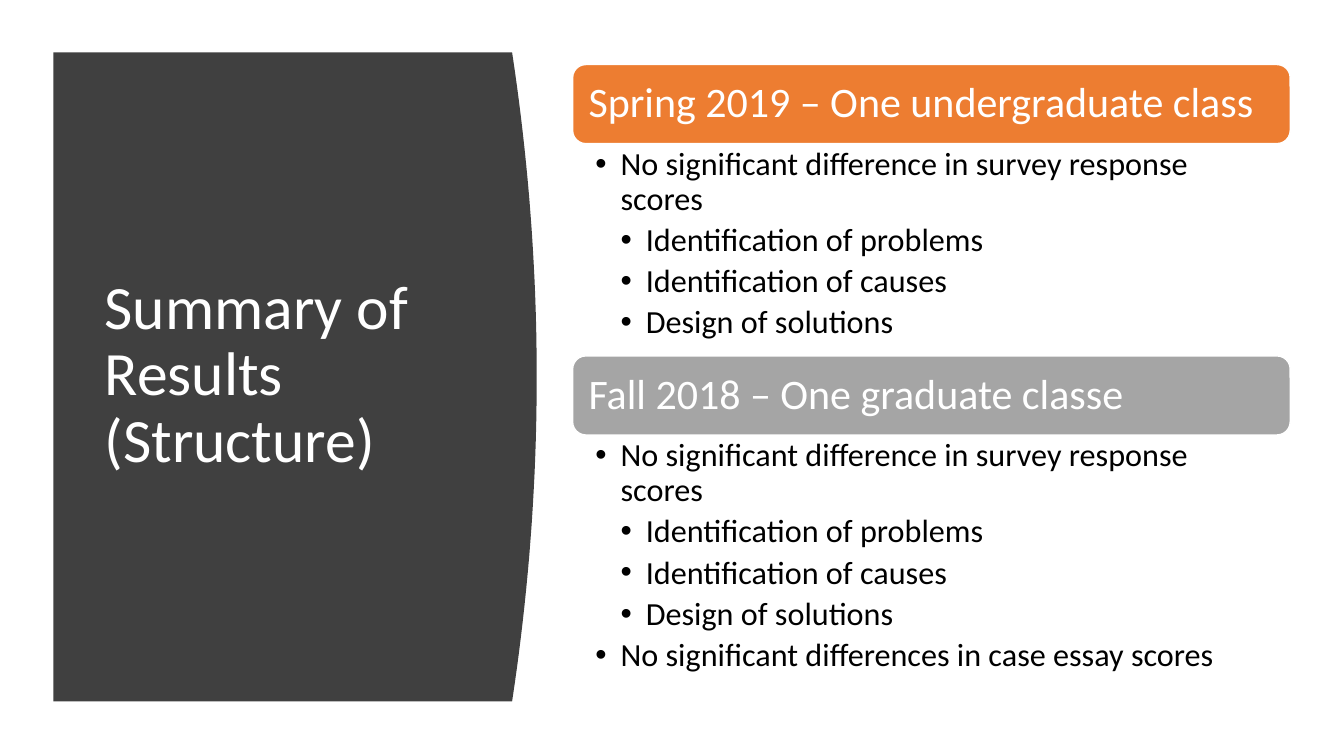
from lxml import etree
from pptx import Presentation
from pptx.dml.color import RGBColor
from pptx.enum.shapes import MSO_SHAPE
from pptx.enum.text import MSO_ANCHOR, PP_ALIGN
from pptx.oxml.ns import qn
from pptx.util import Pt

WHITE = RGBColor(0xFF, 0xFF, 0xFF)
BLACK = RGBColor(0, 0, 0)
CHARCOAL = RGBColor(0x40, 0x40, 0x40)
ORANGE = RGBColor(0xED, 0x7D, 0x31)
GRAY = RGBColor(0xA5, 0xA5, 0xA5)
FONT = "Calibri"

# Content: heading, colour, body height, (level, finding)
TITLE = "Summary of Results (Structure)"
SURVEY_FINDINGS = [
    (1, "No significant difference in survey response scores"),
    (2, "Identification of problems"),
    (2, "Identification of causes"),
    (2, "Design of solutions"),
]
SECTIONS = [
    ("Spring 2019 – One undergraduate class", ORANGE, 151.6, SURVEY_FINDINGS),
    ("Fall 2018 – One graduate classe", GRAY, 180.7,
     SURVEY_FINDINGS + [(1, "No significant differences in case essay scores")]),
]

# Layout in points
PANEL_LEFT, PANEL_TOP, PANEL_RIGHT, PANEL_BOTTOM = 38.2, 37.4, 365.8, 501.1
PANEL_BULGE = 17.6
CURVE_STEPS = 40
SECTION_LEFT, SECTION_TOP, SECTION_WIDTH = 409, 46.1, 512.6
HEADING_HEIGHT = 56.5
BULLET_INDENT = 18


def set_insets(frame, horizontal, vertical):
    frame.word_wrap = True
    frame.margin_left = frame.margin_right = Pt(horizontal)
    frame.margin_top = frame.margin_bottom = Pt(vertical)


def write(paragraph, text, size, color, space_after=0):
    paragraph.text = text
    paragraph.alignment = PP_ALIGN.LEFT
    paragraph.line_spacing = 0.9
    paragraph.space_after = Pt(space_after)
    paragraph.font.name = FONT
    paragraph.font.size = Pt(size)
    paragraph.font.color.rgb = color


def add_bullet(paragraph, level):
    paragraph.level = level
    properties = paragraph._p.get_or_add_pPr()
    properties.set("marL", str(Pt(BULLET_INDENT * level)))
    properties.set("indent", str(-Pt(BULLET_INDENT)))
    etree.SubElement(properties, qn("a:buFont")).set("typeface", "Arial")
    etree.SubElement(properties, qn("a:buChar")).set("char", "•")


presentation = Presentation()
presentation.slide_width, presentation.slide_height = Pt(960), Pt(540)
slide = presentation.slides.add_slide(presentation.slide_layouts[6])
shapes = slide.shapes

# Title panel with a parabolic right edge
curve = []
for step in range(CURVE_STEPS + 1):
    t = 2 * step / CURVE_STEPS - 1
    y = PANEL_TOP + (PANEL_BOTTOM - PANEL_TOP) * step / CURVE_STEPS
    curve.append((Pt(PANEL_RIGHT + PANEL_BULGE * (1 - t * t)), Pt(y)))
outline = shapes.build_freeform(Pt(PANEL_LEFT), Pt(PANEL_TOP))
outline.add_line_segments(curve + [(Pt(PANEL_LEFT), Pt(PANEL_BOTTOM))], close=True)
panel = outline.convert_to_shape()
panel.shadow.inherit = False
panel.fill.solid()
panel.fill.fore_color.rgb = CHARCOAL
panel.line.fill.background()

title = shapes.add_textbox(Pt(67.7), Pt(79.9), Pt(269.3), Pt(377.3)).text_frame
set_insets(title, 7.2, 3.6)
title.vertical_anchor = MSO_ANCHOR.MIDDLE
write(title.paragraphs[0], TITLE, 44, WHITE)

# Sections stacked from the top
top = SECTION_TOP
for heading_text, color, body_height, findings in SECTIONS:
    heading = shapes.add_shape(MSO_SHAPE.ROUNDED_RECTANGLE, Pt(SECTION_LEFT), Pt(top),
                               Pt(SECTION_WIDTH), Pt(HEADING_HEIGHT))
    heading.shadow.inherit = False
    heading.fill.solid()
    heading.fill.fore_color.rgb = color
    heading.line.color.rgb = WHITE
    heading.line.width = Pt(1)
    set_insets(heading.text_frame, 8.64, 8.64)
    heading.text_frame.vertical_anchor = MSO_ANCHOR.MIDDLE
    write(heading.text_frame.paragraphs[0], heading_text, 30, WHITE)
    top += HEADING_HEIGHT

    body = shapes.add_textbox(Pt(SECTION_LEFT), Pt(top),
                              Pt(SECTION_WIDTH), Pt(body_height)).text_frame
    set_insets(body, 16.3, 2.9)
    for index, (level, finding) in enumerate(findings):
        paragraph = body.add_paragraph() if index else body.paragraphs[0]
        write(paragraph, finding, 23, BLACK, space_after=4.6)
        add_bullet(paragraph, level)
    top += body_height

presentation.save("out.pptx")
